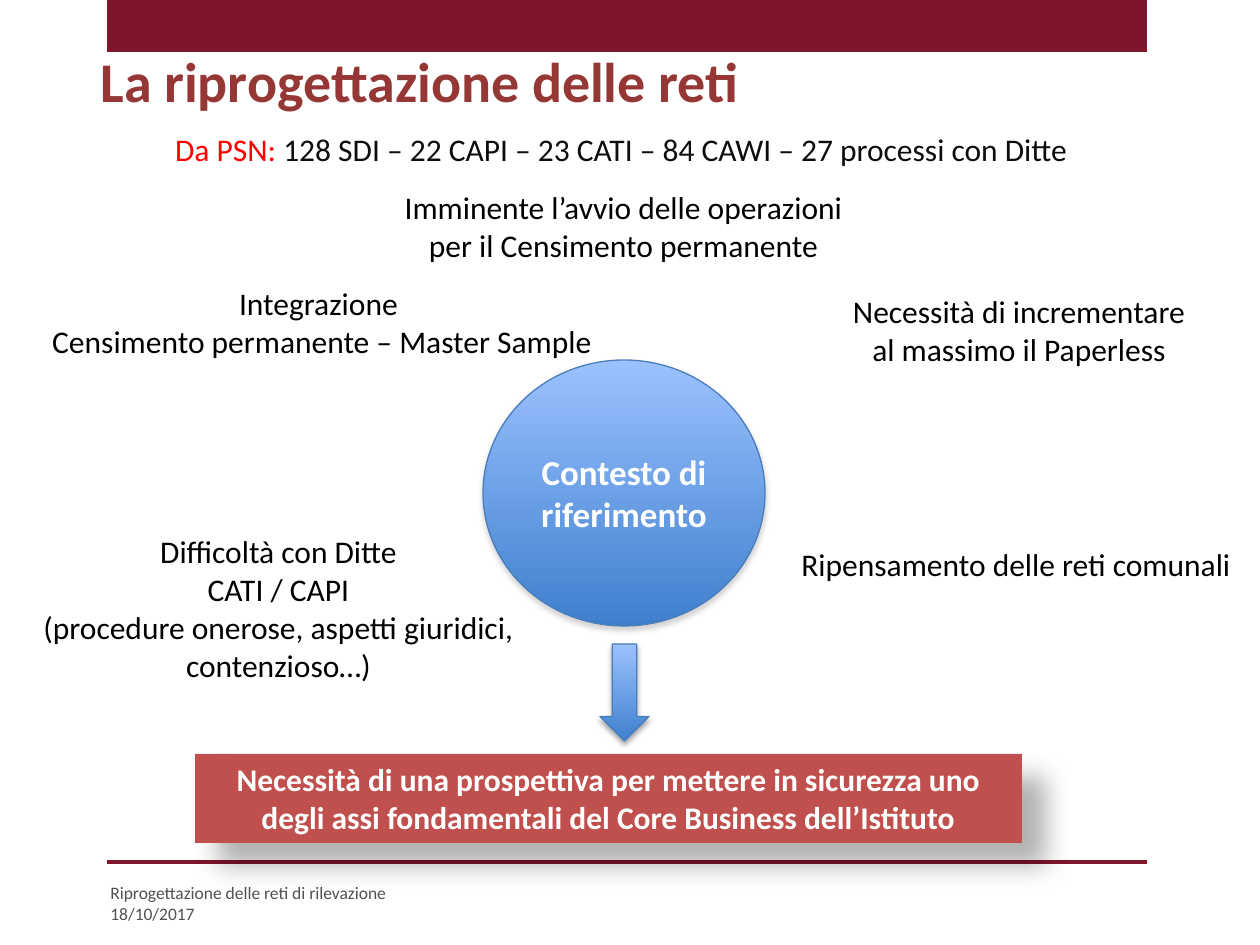
from lxml.etree import SubElement
from pptx import Presentation
from pptx.dml.color import RGBColor
from pptx.enum.shapes import MSO_CONNECTOR, MSO_SHAPE
from pptx.enum.text import MSO_ANCHOR, MSO_AUTO_SIZE, PP_ALIGN
from pptx.oxml.ns import qn
from pptx.util import Emu, Pt

SCALE = 914400 / 126
FONT = "Calibri"
COLORS = {
    "burgundy": "7F142A", "title": "953735", "footer": "505150",
    "black": "000000", "dark": "0D0D0D", "white": "FFFFFF", "red": "FF0000",
    "conclusion": "C0504D", "light_blue": "9BC1FF", "blue": "3F80CD",
    "outline": "4A7EBB", "grey": "808080",
}


def px(value):
    return Emu(round(value * SCALE))


def rgb(name):
    return RGBColor.from_string(COLORS[name])


def write(shape, lines, size, color, align=PP_ALIGN.LEFT, bold=False):
    """Fill a shape with one paragraph per line."""
    frame = shape.text_frame
    for index, line in enumerate(lines):
        paragraph = frame.add_paragraph() if index else frame.paragraphs[0]
        paragraph.add_run().text = line
        paragraph.alignment = align
        font = paragraph.font
        font.name, font.size, font.bold = FONT, Pt(size), bold
        font.color.rgb = rgb(color)


def add_text(slide, box, lines, size=18, color="black",
             align=PP_ALIGN.CENTER, bold=False, wrap=False):
    shape = slide.shapes.add_textbox(*map(px, box))
    shape.text_frame.word_wrap = wrap
    if not wrap:
        shape.text_frame.auto_size = MSO_AUTO_SIZE.SHAPE_TO_FIT_TEXT
    write(shape, lines, size, color, align, bold)
    return shape


def add_solid(slide, box, color):
    shape = slide.shapes.add_shape(MSO_SHAPE.RECTANGLE, *map(px, box))
    shape.shadow.inherit = False
    shape.fill.solid()
    shape.fill.fore_color.rgb = rgb(color)
    shape.line.fill.background()
    return shape


def add_shadow(shape, color, opacity, blur, distance, angle):
    """Cast an outer shadow; lengths in points, opacity in percent."""
    effects = shape._element.spPr.find(qn("a:effectLst"))
    shadow = SubElement(
        effects, qn("a:outerShdw"), blurRad=str(Pt(blur)), dist=str(Pt(distance)),
        dir=str(angle * 60000), algn="tl", rotWithShape="0")
    tint = SubElement(shadow, qn("a:srgbClr"), val=COLORS[color])
    SubElement(tint, qn("a:alpha"), val=str(opacity * 1000))


def add_gradient_shape(slide, kind, box, shadow_color):
    shape = slide.shapes.add_shape(kind, *map(px, box))
    shape.shadow.inherit = False
    shape.fill.gradient()
    shape.fill.gradient_angle = 270
    for stop, color, position in zip(shape.fill.gradient_stops,
                                     ("light_blue", "blue"), (0, 1)):
        stop.color.rgb = rgb(color)
        stop.position = position
    shape.line.color.rgb = rgb("outline")
    shape.line.width = Pt(0.75)
    add_shadow(shape, shadow_color, 35, 3.1, 1.8, 90)
    return shape


def add_rule(slide, left, right, y):
    rule = slide.shapes.add_connector(
        MSO_CONNECTOR.STRAIGHT, px(left), px(y), px(right), px(y))
    rule.line.color.rgb = rgb("burgundy")
    rule.line.width = Pt(2)
    SubElement(rule._element.spPr, qn("a:effectLst"))


def add_context(slide):
    circle = add_gradient_shape(slide, MSO_SHAPE.OVAL, (483, 360, 282, 266), "grey")
    circle.text_frame.word_wrap = True
    circle.text_frame.vertical_anchor = MSO_ANCHOR.MIDDLE
    write(circle, ["Contesto di riferimento"], 20, "white", PP_ALIGN.CENTER, True)

    add_text(slide, (388, 182, 471, 90),
             ["Imminente l’avvio delle operazioni", "per il Censimento permanente"])
    add_text(slide, (36, 278, 572, 89),
             ["Integrazione ", "Censimento permanente – Master Sample"])
    add_text(slide, (789, 539, 460, 51), ["Ripensamento delle reti comunali"],
             align=PP_ALIGN.LEFT)
    add_text(slide, (28, 526, 501, 168),
             ["Difficoltà con Ditte", "CATI / CAPI",
              "(procedure onerose, aspetti giuridici,", "contenzioso…)"])
    add_text(slide, (834, 286, 370, 89),
             ["Necessità di incrementare al massimo il Paperless"], wrap=True)


def add_conclusion(slide):
    box = add_solid(slide, (195, 754, 827, 89), "conclusion")
    add_shadow(box, "black", 30, 15, 18, 45)
    box.text_frame.word_wrap = True
    box.text_frame.vertical_anchor = MSO_ANCHOR.TOP
    write(box, ["Necessità di una prospettiva per mettere in sicurezza uno degli "
                "assi fondamentali del Core Business dell’Istituto"],
          18, "white", PP_ALIGN.CENTER, True)


def add_survey_counts(slide):
    counts = add_text(slide, (160, 124, 930, 50), ["Da PSN: "], color="red")
    run = counts.text_frame.paragraphs[0].add_run()
    run.text = "128 SDI – 22 CAPI – 23 CATI – 84 CAWI – 27 processi con Ditte "
    run.font.color.rgb = rgb("dark")


def main():
    presentation = Presentation()
    presentation.slide_width, presentation.slide_height = px(1260), px(945)
    slide = presentation.slides.add_slide(presentation.slide_layouts[6])

    add_solid(slide, (107, 0, 1040, 52), "burgundy")
    add_rule(slide, 107, 1147, 862)
    add_context(slide)
    add_conclusion(slide)
    add_text(slide, (88, 40, 1041, 68), ["La riprogettazione delle reti"], 32,
             "title", PP_ALIGN.LEFT, bold=True, wrap=True)
    add_text(slide, (98, 876, 416, 55),
             ["Riprogettazione delle reti di rilevazione", "18/10/2017"], 10,
             "footer", PP_ALIGN.LEFT, wrap=True)
    add_gradient_shape(slide, MSO_SHAPE.DOWN_ARROW, (600, 644, 49, 97), "black")
    add_survey_counts(slide)

    presentation.save("out.pptx")


if __name__ == "__main__":
    main()
